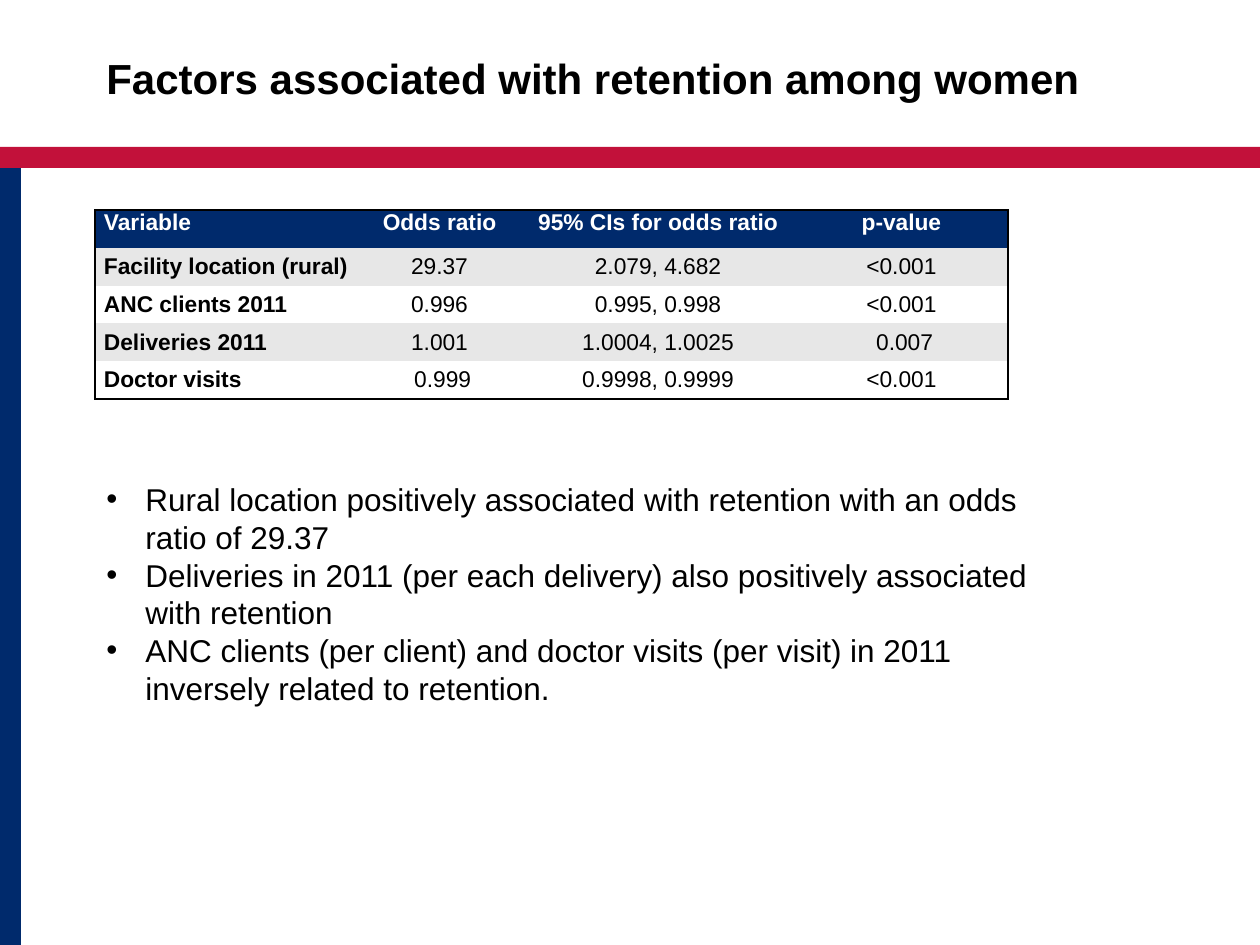
from lxml import etree
from pptx import Presentation
from pptx import util as u
from pptx.dml.color import RGBColor
from pptx.enum import shapes, text
from pptx.oxml import ns

PX = 914400 / 126
FONT = "Arial"
RED, NAVY, GREY, WHITE, BLACK = "C2113A", "002A6C", "E7E7E7", "FFFFFF", "000000"

COLUMN_WIDTHS = [263, 163, 274, 213]
ROWS = [
    ["Variable", "Odds ratio", "95% CIs for odds ratio", "p-value"],
    ["Facility location (rural)", "29.37", "2.079, 4.682", "<0.001"],
    ["ANC clients 2011", "0.996", "0.995, 0.998", "<0.001"],
    ["Deliveries 2011", "1.001", "1.0004, 1.0025", " 0.007"],
    ["Doctor visits", " 0.999", "0.9998, 0.9999", "<0.001"],
]
FINDINGS = [
    "Rural location positively associated with retention with an odds ratio of 29.37",
    "Deliveries in 2011 (per each delivery) also positively associated with retention",
    "ANC clients (per client) and doctor visits (per visit) in 2011 inversely related to retention.",
]


def px(length):
    return u.Emu(round(length * PX))


def color(hex_code):
    return RGBColor.from_string(hex_code)


def set_all(target, values):
    for key, value in values.items():
        setattr(target, key, value)


def write(paragraph, words, size, hex_code=BLACK, bold=False):
    run = paragraph.add_run()
    run.text = words
    set_all(run.font, {"name": FONT, "size": u.Pt(size), "bold": bold})
    run.font.color.rgb = color(hex_code)


def add_band(slide, box, fill):
    band = slide.shapes.add_shape(shapes.MSO_SHAPE.RECTANGLE, *map(px, box))
    band.shadow.inherit = False
    band.fill.solid()
    band.fill.fore_color.rgb = color(fill)
    band.line.fill.background()


def add_frame(slide, box, top_inset):
    frame = slide.shapes.add_textbox(*map(px, box)).text_frame
    set_all(frame, {"word_wrap": True, "margin_top": px(top_inset),
                    "vertical_anchor": text.MSO_ANCHOR.TOP})
    return frame


def add_title(slide, box):
    frame = add_frame(slide, box, 10)
    write(frame.paragraphs[0], "Factors associated with retention among women", 24, bold=True)


def set_border(cell, side, hex_code):
    """Draw one side of a cell, or clear it when no colour is given."""
    line = etree.SubElement(cell._tc.get_or_add_tcPr(), ns.qn(f"a:ln{side}"), w=str(u.Pt(1)))
    if hex_code:
        fill = etree.SubElement(line, ns.qn("a:solidFill"))
        etree.SubElement(fill, ns.qn("a:srgbClr"), val=hex_code)
    else:
        etree.SubElement(line, ns.qn("a:noFill"))


def add_odds_table(slide, box):
    last_row, last_column = len(ROWS) - 1, len(COLUMN_WIDTHS) - 1
    table = slide.shapes.add_table(len(ROWS), len(COLUMN_WIDTHS), *map(px, box)).table
    for column, width in zip(table.columns, COLUMN_WIDTHS):
        column.width = px(width)

    for r, values in enumerate(ROWS):
        table.rows[r].height = px(box[3] / len(ROWS))
        header = r == 0
        for c, value in enumerate(values):
            cell = table.cell(r, c)
            set_all(cell, {
                "margin_left": px(9), "margin_right": px(9),
                "margin_top": 0, "margin_bottom": 0,
                "vertical_anchor": text.MSO_ANCHOR.TOP if header else text.MSO_ANCHOR.MIDDLE,
            })
            paragraph = cell.text_frame.paragraphs[0]
            paragraph.alignment = text.PP_ALIGN.CENTER if c else text.PP_ALIGN.LEFT
            write(paragraph, value, 13, WHITE if header else BLACK, header or c == 0)

            # Only the outer edge of the table is ruled; borders precede the fill
            outer = {"L": c == 0, "R": c == last_column, "T": header, "B": r == last_row}
            for side, ruled in outer.items():
                set_border(cell, side, BLACK if ruled else None)
            cell.fill.solid()
            cell.fill.fore_color.rgb = color(NAVY if header else GREY if r % 2 else WHITE)


def add_findings(slide, box):
    frame = add_frame(slide, box, 8)
    for i, finding in enumerate(FINDINGS):
        paragraph = frame.add_paragraph() if i else frame.paragraphs[0]
        paragraph.line_spacing = u.Pt(21.6)
        write(paragraph, finding, 18)
        properties = paragraph._p.get_or_add_pPr()
        properties.set("marL", str(px(39)))
        properties.set("indent", str(-px(39)))
        etree.SubElement(properties, ns.qn("a:buFont"), typeface=FONT)
        etree.SubElement(properties, ns.qn("a:buChar"), char="•")


def main():
    deck = Presentation()
    deck.slide_width, deck.slide_height = px(1260), px(945)
    slide = deck.slides.add_slide(deck.slide_layouts[6])

    # Red rule and navy side bar
    add_band(slide, (0, 147, 1260, 21), RED)
    add_band(slide, (0, 168, 21, 777), NAVY)

    # Title, odds ratios and findings
    add_title(slide, (94, 42, 1071, 84))
    add_odds_table(slide, (95, 210, sum(COLUMN_WIDTHS), 189))
    add_findings(slide, (94, 472, 966, 242))

    deck.save("out.pptx")


if __name__ == "__main__":
    main()
